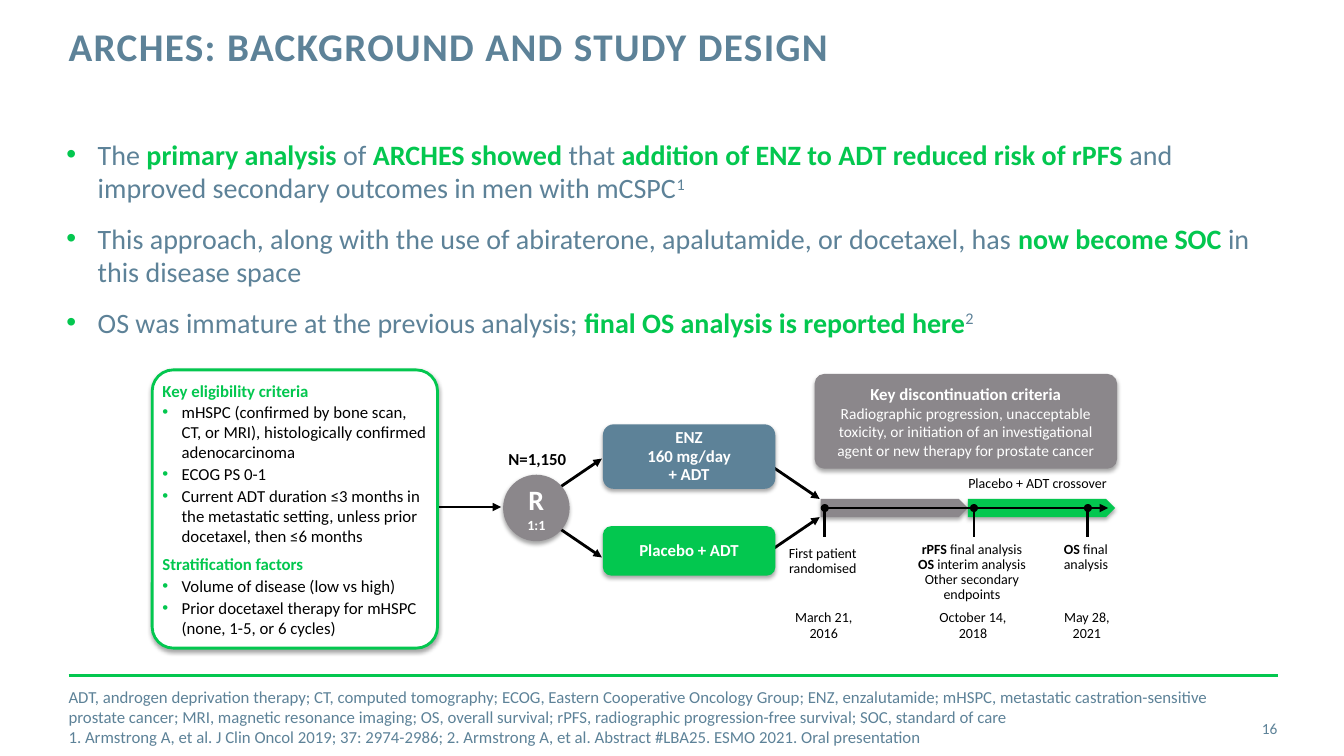
from lxml.etree import SubElement as Sub
from pptx import Presentation
from pptx.dml.color import RGBColor
from pptx.enum.shapes import MSO_CONNECTOR as Link, MSO_SHAPE as Form
from pptx.enum.text import MSO_ANCHOR as Anchor, PP_ALIGN as Align
from pptx.oxml.ns import qn
from pptx.util import Inches, Pt

GREEN, SLATE, GREY = "03C74F", "5D8298", "8B878B"
BLACK, WHITE = "000000", "FFFFFF"


def color(code):
    return RGBColor.from_string(code)


def bullet(para, indent):
    props = para._p.get_or_add_pPr()
    props.set("marL", str(Inches(indent)))
    props.set("indent", str(-Inches(indent)))
    tint = Sub(props, qn("a:buClr"))
    Sub(tint, qn("a:srgbClr"), val=GREEN)
    Sub(props, qn("a:buFont"), typeface="Arial")
    Sub(props, qn("a:buChar"), char="•")


def add_runs(para, line, size, ink, big, hot):
    for i, part in enumerate(line.split("*")):
        strong = i % 2 == 1
        for j, piece in enumerate(part.split("^")):
            for k, words in enumerate(piece.split("\n")):
                if k:
                    para.add_line_break()
                if not words:
                    continue
                run = para.add_run()
                run.text = words
                font = run.font
                font.name, font.bold = "Calibri", strong
                font.size = Pt(big if strong else size)
                font.color.rgb = color(hot if strong else ink)
                if j % 2:
                    run._r.get_or_add_rPr().set("baseline", "30000")
    for gap in para._p.findall(qn("a:br")):
        Sub(gap, qn("a:rPr"), sz=str(size * 100))


def write(frame, lines, size, ink, big=None, hot=None, align=Align.LEFT,
          anchor=Anchor.TOP, wrap=True, lead=None, indent=0, gap=0, head=0):
    frame.word_wrap = wrap
    frame.vertical_anchor = anchor
    frame.margin_left = frame.margin_right = 0
    frame.margin_top = frame.margin_bottom = 0
    for i, line in enumerate(lines):
        para = frame.add_paragraph() if i else frame.paragraphs[0]
        para.alignment = align
        listed = line.startswith("•")
        if lead:
            para.line_spacing = lead
        if i:
            para.space_before = Pt(gap if listed else head)
        if listed:
            bullet(para, indent)
        add_runs(para, line.lstrip("•"), size, ink, big or size, hot or ink)


def label(slide, box, lines, size, ink, **style):
    area = slide.shapes.add_textbox(*map(Inches, box))
    write(area.text_frame, lines, size, ink, **style)
    return area


def note(slide, mid, top, line, size=10, wide=1.2):
    label(slide, (mid - wide / 2, top, wide, 0.3), [line], size, BLACK,
          align=Align.CENTER, wrap=False, lead=0.9)


def block(slide, form, box, fill, edge=None, shade=True, round=None):
    item = slide.shapes.add_shape(form, *map(Inches, box))
    item.fill.solid()
    item.fill.fore_color.rgb = color(fill)
    if edge:
        item.line.color.rgb = color(edge)
        item.line.width = Pt(2)
    else:
        item.line.fill.background()
    if round:
        item.adjustments[0] = round
    item.shadow.inherit = False
    if shade:
        fx = item._element.spPr.find(qn("a:effectLst"))
        cast = Sub(fx, qn("a:outerShdw"), blurRad=str(Pt(3.1)), dist=str(Pt(1.8)),
                   dir="5400000", rotWithShape="0")
        tint = Sub(cast, qn("a:srgbClr"), val=BLACK)
        Sub(tint, qn("a:alpha"), val="35000")
    return item


def line(slide, x1, y1, x2, y2, ink=BLACK, arrow=False):
    link = slide.shapes.add_connector(Link.STRAIGHT, *map(Inches, (x1, y1, x2, y2)))
    link.line.color.rgb = color(ink)
    link.line.width = Pt(2)
    if arrow:
        Sub(link.line._get_or_add_ln(), qn("a:tailEnd"), type="triangle")
    Sub(link._element.spPr, qn("a:effectLst"))


def title(slide, box):
    area = label(slide, box, ["*ARCHES: BACKGROUND AND STUDY DESIGN*"], 28, SLATE,
                 lead=Pt(30))
    run = area.text_frame.paragraphs[0].runs[0]
    run._r.get_or_add_rPr().set("spc", "100")


def points(slide, box):
    label(slide, box, [
        "•The* primary analysis *of *ARCHES showed *that *addition of ENZ to ADT reduced "
        "risk of rPFS* and improved secondary outcomes in men with mCSPC^1^",
        "•This approach, along with the use of abiraterone, apalutamide, or docetaxel, "
        "has *now become SOC* in this disease space",
        "•OS was immature at the previous analysis; *final OS analysis is reported here*^2^",
    ], 20, SLATE, hot=GREEN, indent=0.31, gap=12)


def criteria(slide, box):
    card = block(slide, Form.ROUNDED_RECTANGLE, box, WHITE, GREEN, round=0.076)
    write(card.text_frame, [
        "*Key eligibility criteria*",
        "•mHSPC (confirmed by bone scan,\nCT, or MRI), histologically confirmed adenocarcinoma",
        "•ECOG PS 0-1",
        "•Current ADT duration ≤3 months in the metastatic setting, unless prior "
        "docetaxel, then ≤6 months",
        "*Stratification factors*",
        "•Volume of disease (low vs high)",
        "•Prior docetaxel therapy for mHSPC (none, 1-5, or 6 cycles)",
    ], 12, BLACK, hot=GREEN, anchor=Anchor.MIDDLE, indent=0.19, gap=1, head=6)
    card.text_frame.margin_left = Inches(0.04)


def stop_rules(slide, box):
    card = block(slide, Form.ROUNDED_RECTANGLE, box, GREY, round=0.103)
    write(card.text_frame, [
        "*Key discontinuation criteria*",
        "Radiographic progression, unacceptable toxicity, or initiation of an "
        "investigational\nagent or new therapy for prostate cancer",
    ], 11, WHITE, big=12, align=Align.CENTER, anchor=Anchor.MIDDLE)


def arms(slide, x, y):
    mid = y + 0.83
    line(slide, x, mid - 0.01, x + 0.75, mid - 0.01, arrow=True)
    for side in (-1, 1):
        line(slide, x + 1.03, mid, x + 1.75, mid + side * 0.49, arrow=True)
        line(slide, x + 3.19, mid + side * 0.58, x + 3.91, mid + side * 0.09, arrow=True)
    note(slide, x + 1.11, y + 0.26, "*N=1,150*", 12)
    disc = block(slide, Form.OVAL, (x + 0.77, mid - 0.33, 0.66, 0.66), GREY)
    write(disc.text_frame, ["*R*", "1:1"], 10, WHITE, big=20,
          align=Align.CENTER, anchor=Anchor.MIDDLE)
    disc.text_frame.paragraphs[1].runs[0].font.bold = True
    for top, tall, fill, words in (
        (y, 0.64, SLATE, "*ENZ\n160 mg/day\n+ ADT*"),
        (y + 1.01, 0.49, GREEN, "*Placebo + ADT*"),
    ):
        arm = block(slide, Form.ROUNDED_RECTANGLE, (x + 1.76, top, 1.71, tall), fill)
        write(arm.text_frame, [words], 12, WHITE, align=Align.CENTER,
              anchor=Anchor.MIDDLE, lead=0.9)


def timeline(slide, x, y):
    axis = y + 0.33
    for i, fill in enumerate((GREY, GREEN)):
        block(slide, Form.PENTAGON, (x + i * 1.46, y + 0.24, 1.46, 0.18), fill)
    line(slide, x + 0.06, axis, x + 2.85, axis, arrow=True)
    note(slide, x + 2.15, y + 0.02, "Placebo + ADT crossover", wide=1.8)
    for step, drop, event, date in (
        (0.04, 0.71, "First patient\nrandomised", "March 21,\n2016"),
        (1.52, 0.67, "*rPFS* final analysis\n*OS* interim analysis\nOther secondary\nendpoints",
         "October 14,\n2018"),
        (2.65, 0.67, "*OS* final\nanalysis", "May 28,\n2021"),
    ):
        mid = x + step
        block(slide, Form.OVAL, (mid - 0.04, axis - 0.04, 0.08, 0.08), BLACK, shade=False)
        line(slide, mid, axis - 0.02, mid, axis + 0.29)
        note(slide, mid - 0.02, y + drop, event)
        note(slide, mid - 0.01, y + 1.35, date)


def footer(slide, x, y):
    line(slide, x, y, x + 12, y, GREEN)
    label(slide, (x, y + 0.21, 11.5, 0.4), [
        "ADT, androgen deprivation therapy; CT, computed tomography; ECOG, Eastern "
        "Cooperative Oncology Group; ENZ, enzalutamide; mHSPC, metastatic "
        "castration-sensitive prostate cancer; MRI, magnetic resonance imaging; OS, overall "
        "survival; rPFS, radiographic progression-free survival; SOC, standard of care",
        "1. Armstrong A, et al. J Clin Oncol 2019; 37: 2974-2986; 2. Armstrong A, et al. "
        "Abstract #LBA25. ESMO 2021. Oral presentation",
    ], 12, SLATE, anchor=Anchor.MIDDLE)
    label(slide, (x + 11.13, y + 0.33, 0.86, 0.4), ["16"], 11, SLATE,
          align=Align.RIGHT, anchor=Anchor.MIDDLE)


def main():
    deck = Presentation()
    deck.slide_width, deck.slide_height = Inches(13.33), Inches(7.5)
    slide = deck.slides.add_slide(deck.slide_layouts[6])
    title(slide, (0.68, 0.27, 9.56, 0.88))
    points(slide, (0.66, 1.36, 12.07, 2.39))
    arms(slide, 4.22, 4.21)
    criteria(slide, (1.51, 3.67, 2.83, 2.76))
    stop_rules(slide, (8.08, 3.71, 3, 0.94))
    timeline(slide, 8.14, 4.71)
    footer(slide, 0.68, 6.7)
    deck.save("out.pptx")


if __name__ == "__main__":
    main()
